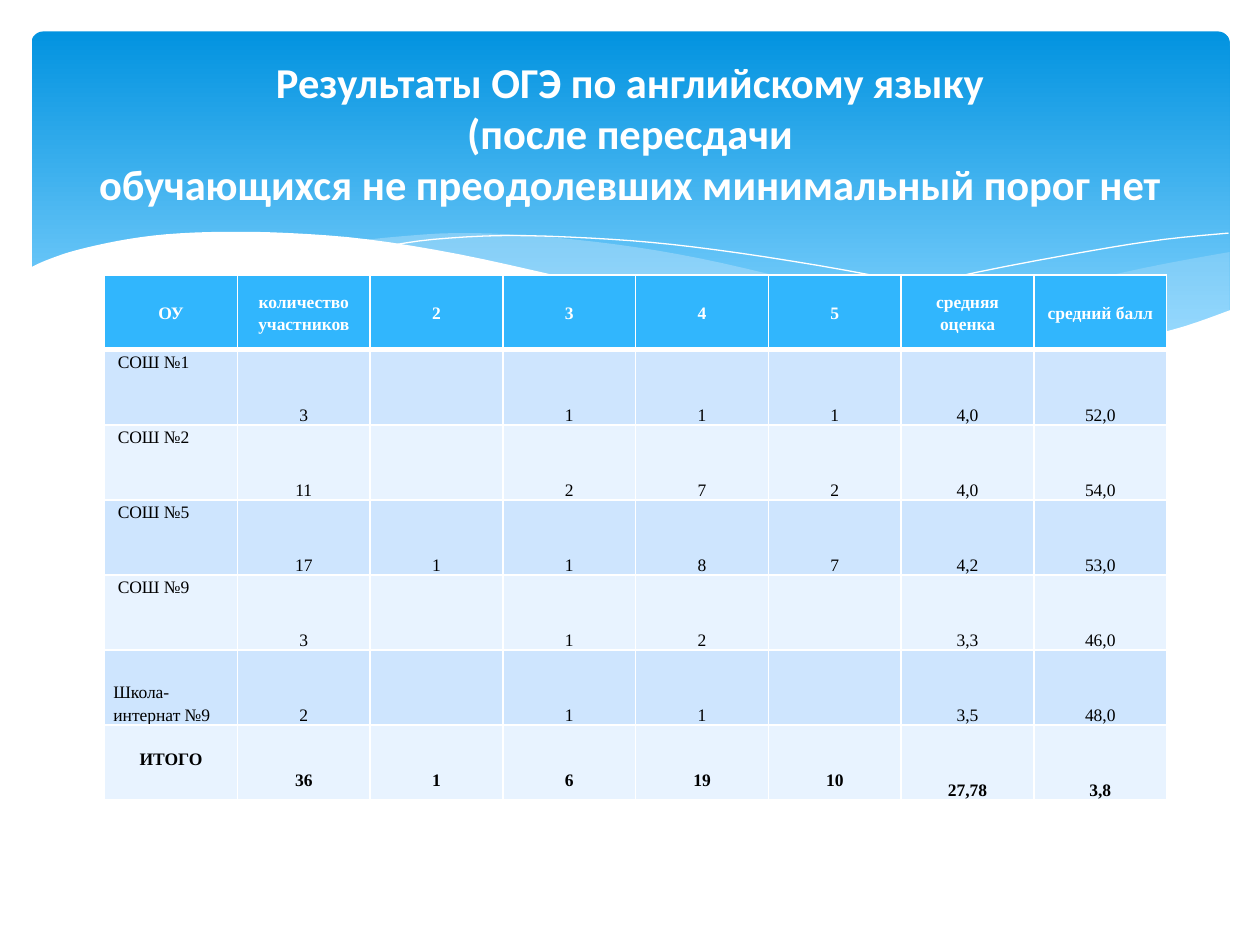
import pptx
import pptx.util
import pptx.dml.color
import pptx.enum.shapes
import pptx.enum.text
import pptx.oxml
import pptx.oxml.ns

Pt = pptx.util.Pt
ALIGN = pptx.enum.text.PP_ALIGN
ANCHOR = pptx.enum.text.MSO_ANCHOR

COLORS = {
    "white": "FFFFFF", "black": "000000", "sky_top": "0293E0", "sky_bottom": "83D3FE",
    "wave": "C6E7FC", "header": "31B6FD", "band_dark": "CEE5FE", "band_light": "E8F3FF",
}

TITLE = ("Результаты ОГЭ по английскому языку\v(после пересдачи\v"
         "обучающихся не преодолевших минимальный порог нет")

ROWS = [
    ["ОУ", "количество участников", "2", "3", "4", "5", "средняя оценка", "средний балл"],
    ["СОШ №1", "3", "", "1", "1", "1", "4,0", "52,0"],
    ["СОШ №2", "11", "", "2", "7", "2", "4,0", "54,0"],
    ["СОШ №5", "17", "1", "1", "8", "7", "4,2", "53,0"],
    ["СОШ №9", "3", "", "1", "2", "", "3,3", "46,0"],
    ["Школа-интернат №9", "2", "", "1", "1", "", "3,5", "48,0"],
    ["ИТОГО", "36", "1", "6", "19", "10", "27,78", "3,8"],
]

RIGHT_TOP = [(686.2, 11.5), (646.6, 18.7), (603.4, 28.1), (525.7, 46.1), (459.4, 58.3)]
RIGHT_BOTTOM = [(459.4, 58.3), (501.2, 63.3), (537.2, 66.9), (576.8, 66.9), (611.3, 64.8),
                (640.9, 59.7), (666.8, 52.5), (686.2, 45.3)]
MIDDLE_TOP = [(626.5, 64.1), (564.5, 54.7), (491.8, 40.3), (436.4, 27.3), (383.1, 15.1),
              (335.6, 7.2), (285.9, 2.1), (243.4, 0.7), (208.9, 2.9), (189.4, 5)]
MIDDLE_BOTTOM = [(189.4, 5), (229.7, 10.8), (274.4, 19.4), (306.8, 27.3), (365.1, 40.3),
                 (428.5, 53.3), (483.9, 61.9), (531.4, 66.9), (572.5, 67.7), (600.5, 66.9),
                 (626.5, 64.1)]
LONG_LINE = [(206, 7.9), (231.2, 4.3), (272.2, 2.1), (321.2, 3.6), (367.3, 7.2),
             (421.3, 14.4), (483.9, 25.2), (555.9, 41), (636.5, 63.3)]
SHORT_LINE = [(424.9, 52.5), (483.9, 36.7), (542.2, 23), (607, 10.8), (648.8, 4.3),
              (685.5, 0.7)]
FRONT_TOP = [(686.9, 44.6), (660.3, 54), (630.8, 61.2), (595.5, 65.5), (554.5, 66.2),
             (506.2, 63.3), (450.1, 56.1), (383.1, 43.9), (305.3, 25.9), (246.3, 12.9),
             (193.7, 4.3), (149.1, 0.7), (110.9, 0), (78.5, 1.4), (51.9, 5), (26, 10.8),
             (9.4, 16.5), (0, 20.9)]


def rgb(name):
    """Return the named colour."""
    return pptx.dml.color.RGBColor.from_string(COLORS[name])


def apply(obj, fmt):
    """Set every attribute in a dict of format values."""
    for key, value in fmt.items():
        setattr(obj, key, value)


def write(tf, text, color, font, para):
    """Write one formatted paragraph."""
    p = tf.paragraphs[0]
    p.text = text
    apply(p, para)
    for r in p.runs:
        apply(r.font, font)
        r.font.color.rgb = rgb(color)


def smooth(knots, steps=4):
    """Return points on a Catmull-Rom curve through the knots."""
    ends = [knots[0], *knots, knots[-1]]
    points = [knots[0]]
    for a, b, c, d in zip(ends, ends[1:], ends[2:], ends[3:]):
        for t in (i / steps for i in range(1, steps + 1)):
            points.append(tuple(
                0.5 * (2 * q + (s - o) * t + (2 * o - 5 * q + 4 * s - u) * t ** 2
                       + (3 * q - o - 3 * s + u) * t ** 3)
                for o, q, s, u in zip(a, b, c, d)))
    return points


def add_wave(s, left, top, points, fill=None, opacity=100):
    """Draw a filled wave, or a white hairline when no fill is given."""
    pts = [(Pt(x), Pt(y)) for x, y in points]
    fb = s.shapes.build_freeform(*pts[0])
    fb.add_line_segments(pts[1:], close=fill is not None)
    sp = fb.convert_to_shape(Pt(left), Pt(top))
    sp.shadow.inherit = False
    if fill is None:
        sp.fill.background()
        sp.line.color.rgb = rgb("white")
        sp.line.width = Pt(0)
        return
    sp.line.fill.background()
    sp.fill.solid()
    sp.fill.fore_color.rgb = rgb(fill)
    if opacity < 100:
        clr = sp.fill._xPr.find(".//" + pptx.oxml.ns.qn("a:srgbClr"))
        alpha = clr.makeelement(pptx.oxml.ns.qn("a:alpha"), {"val": str(opacity * 1000)})
        clr.append(alpha)


def add_sky(s, left, top, width, height):
    """Draw the rounded gradient panel."""
    sp = s.shapes.add_shape(pptx.enum.shapes.MSO_SHAPE.ROUNDED_RECTANGLE,
                            Pt(left), Pt(top), Pt(width), Pt(height))
    sp.adjustments[0] = 0.034
    sp.shadow.inherit = False
    sp.line.fill.background()
    sp.fill.gradient()
    sp.fill.gradient_angle = 270
    for stop, name, pos in zip(sp.fill.gradient_stops, ("sky_top", "sky_bottom"), (0, 0.9)):
        stop.color.rgb = rgb(name)
        stop.position = pos


def add_waves(s, left, top, width, height):
    """Draw the waves along the foot of the panel."""
    add_wave(s, left, top, smooth(RIGHT_TOP) + smooth(RIGHT_BOTTOM), "wave", 29)
    add_wave(s, left, top, smooth(MIDDLE_TOP) + smooth(MIDDLE_BOTTOM), "wave", 40)
    add_wave(s, left, top, smooth(LONG_LINE))
    add_wave(s, left, top, smooth(SHORT_LINE))
    corners = [(0, height), (width, height)]
    add_wave(s, left, top, smooth(FRONT_TOP) + corners, "white")


def add_title(s, left, top, width, height):
    """Write the centred slide title."""
    tf = s.shapes.add_textbox(Pt(left), Pt(top), Pt(width), Pt(height)).text_frame
    apply(tf, {"word_wrap": True, "vertical_anchor": ANCHOR.MIDDLE})
    write(tf, TITLE, "white", {"name": "Calibri", "size": Pt(24.3), "bold": True},
          {"alignment": ALIGN.CENTER})


def set_borders(cell, widths):
    """Give the cell white borders of the given widths."""
    tcPr = cell._tc.get_or_add_tcPr()
    for i, (side, width) in enumerate(widths.items()):
        tcPr.insert(i, pptx.oxml.parse_xml(
            f'<a:{side} {pptx.oxml.ns.nsdecls("a")} w="{Pt(width)}"><a:solidFill>'
            f'<a:srgbClr val="{COLORS["white"]}"/></a:solidFill></a:{side}>'))


def cell_format(i, j):
    """Return the anchor, top margin and left margin of a cell."""
    last = len(ROWS) - 1
    if i == 0:
        return ANCHOR.MIDDLE, 0, 5
    if i == last and j < 6:
        return ANCHOR.TOP, 25 if j else 12.5, 5
    if j == 0 and i < last - 1:
        return ANCHOR.TOP, 0, 7.5
    return ANCHOR.BOTTOM, 0, 5


def add_results(s, left, top, width, height):
    """Build the table of exam results."""
    n, m = len(ROWS), len(ROWS[0])
    tbl = s.shapes.add_table(n, m, Pt(left), Pt(top), Pt(width), Pt(height)).table
    for col in tbl.columns:
        col.width = Pt(width / m)
    for i, row in enumerate(ROWS):
        tbl.rows[i].height = Pt(height / n)
        fill = "header" if i == 0 else "band_dark" if i % 2 else "band_light"
        for j, text in enumerate(row):
            cell = tbl.cell(i, j)
            anchor, above, before = cell_format(i, j)
            apply(cell, {"vertical_anchor": anchor, "margin_left": Pt(before),
                         "margin_right": Pt(5), "margin_top": Pt(above), "margin_bottom": 0})
            cell.fill.solid()
            cell.fill.fore_color.rgb = rgb(fill)
            set_borders(cell, {"lnL": 1, "lnR": 1, "lnT": 3 if i == 1 else 1,
                               "lnB": 1 if i else 3})
            named = j == 0 and 0 < i < n - 1
            write(cell.text_frame, text, "black" if i else "white",
                  {"name": "Times New Roman", "size": Pt(10), "bold": i in (0, n - 1)},
                  {"alignment": ALIGN.LEFT if named else ALIGN.CENTER, "line_spacing": 1.15})


def main():
    """Build and save the slide."""
    prs = pptx.Presentation()
    apply(prs, {"slide_width": Pt(720), "slide_height": Pt(540)})
    s = prs.slides.add_slide(prs.slide_layouts[6])
    add_sky(s, 18, 18, 684.7, 194.4)
    add_waves(s, 16.5, 132.5, 686.9, 104.4)
    add_title(s, 36, 26.6, 648, 98.6)
    add_results(s, 59.8, 157, 607, 300.2)
    prs.save("out.pptx")


if __name__ == "__main__":
    main()
